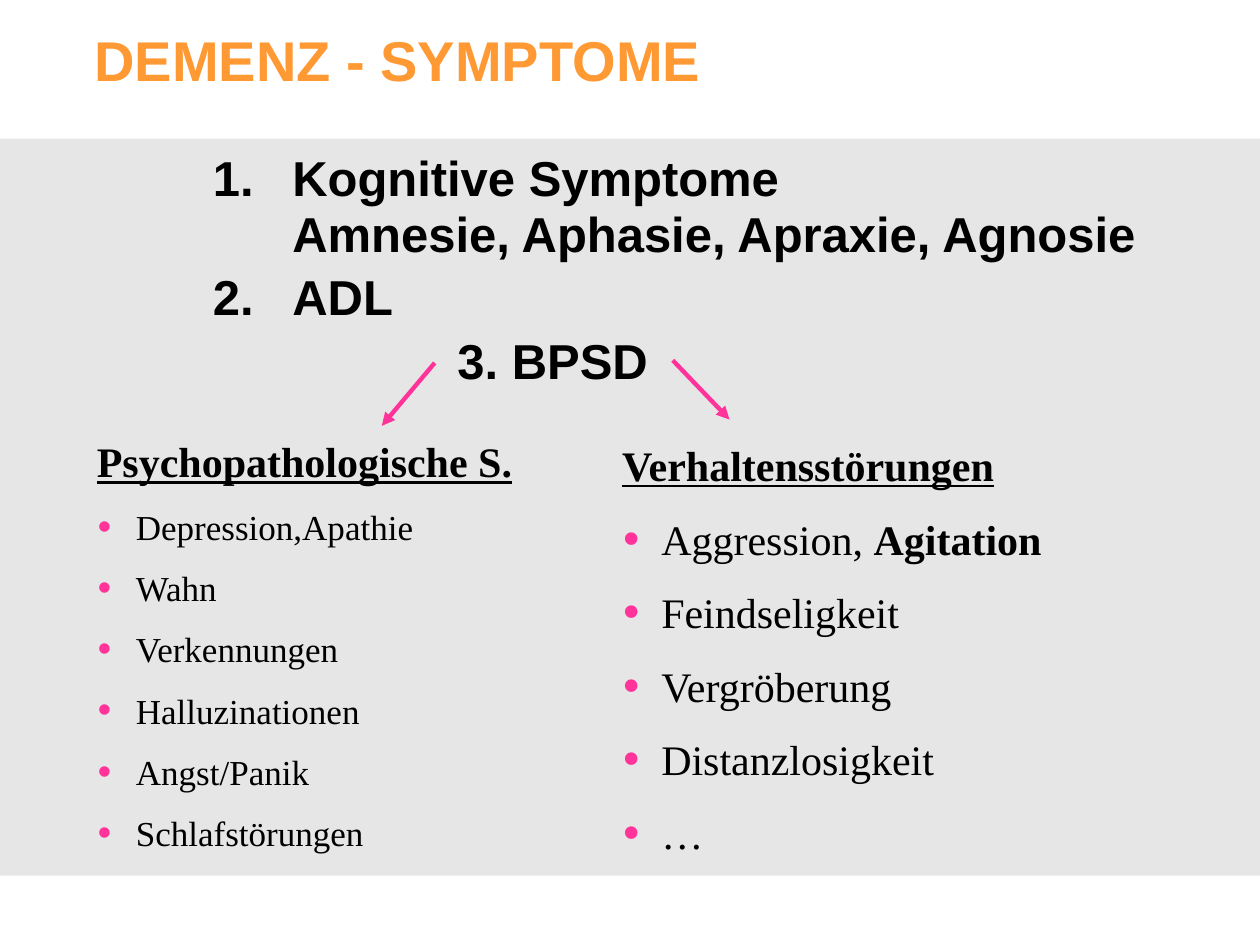
from dataclasses import dataclass

from lxml import etree
from pptx import Presentation
from pptx.dml.color import RGBColor
from pptx.enum import shapes, text
from pptx.oxml import ns
from pptx.util import Inches, Pt


@dataclass(frozen=True)
class Theme:
    orange = RGBColor(0xFF, 0x99, 0x33)
    pink = RGBColor(0xFF, 0x33, 0x99)
    gray = RGBColor(0xE6, 0xE6, 0xE6)
    black = RGBColor(0, 0, 0)
    sans = "Arial"
    serif = "Times New Roman"
    title_size = Pt(32)
    main_size = Pt(28)
    heading_size = Pt(24)
    arrow_width = Pt(2.5)


THEME = Theme()

# text, left margin, first-line indent, line spacing
MAIN_SYMPTOMS = [
    ("1.\tKognitive Symptome", 0.63, -0.63, 0.75),
    ("Amnesie, Aphasie, Apraxie, Agnosie", 0.63, 0, 0.75),
    ("2.\tADL", 0.63, -0.63, 0.9),
    ("3. BPSD", 1.94, 0, 0.9),
]
# each item is a list of (text, bold) runs
PSYCHOPATHOLOGICAL = [
    [(item, False)]
    for item in ("Depression,Apathie", "Wahn", "Verkennungen",
                 "Halluzinationen", "Angst/Panik", "Schlafstörungen")
]
BEHAVIOURAL = [[("Aggression, ", False), ("Agitation", True)]] + [
    [(item, False)]
    for item in ("Feindseligkeit", "Vergröberung", "Distanzlosigkeit", "…")
]


def set_attributes(target, values):
    for name, value in values.items():
        setattr(target, name, value)


def add_run(paragraph, wording, color=THEME.black, **font_values):
    run = paragraph.add_run()
    run.text = wording
    set_attributes(run.font, font_values)
    run.font.color.rgb = color


def set_indent(paragraph, margin, first_line):
    properties = paragraph._p.get_or_add_pPr()
    properties.set("marL", str(Inches(margin)))
    properties.set("indent", str(Inches(first_line)))
    return properties


def add_bullet(paragraph):
    properties = set_indent(paragraph, 0.31, -0.31)
    color = etree.SubElement(properties, ns.qn("a:buClr"))
    etree.SubElement(color, ns.qn("a:srgbClr"), val=str(THEME.pink))
    etree.SubElement(properties, ns.qn("a:buSzPct"), val="125000")
    etree.SubElement(properties, ns.qn("a:buFont"), typeface=THEME.serif)
    etree.SubElement(properties, ns.qn("a:buChar"), char="•")


def next_paragraph(frame, index):
    return frame.add_paragraph() if index else frame.paragraphs[0]


def add_text_frame(slide, box, **frame_values):
    frame = slide.shapes.add_textbox(*map(Inches, box)).text_frame
    set_attributes(frame, {"word_wrap": True, **frame_values})
    return frame


def add_background_band(slide):
    band = slide.shapes.add_shape(
        shapes.MSO_SHAPE.RECTANGLE, 0, Inches(1.1), Inches(10), Inches(5.85))
    band.shadow.inherit = False
    band.fill.solid()
    band.fill.fore_color.rgb = THEME.gray
    band.line.fill.background()
    # Behind the title placeholder
    slide.shapes._spTree.insert(2, band._element)


def format_title(slide, wording):
    title = slide.shapes.title
    set_attributes(title, {
        "left": Inches(0.75), "top": Inches(0.17),
        "width": Inches(8.5), "height": Inches(0.6)})
    set_attributes(title.text_frame, {
        "margin_left": 0, "margin_right": 0, "word_wrap": True,
        "auto_size": text.MSO_AUTO_SIZE.NONE,
        "vertical_anchor": text.MSO_ANCHOR.MIDDLE})
    paragraph = title.text_frame.paragraphs[0]
    paragraph.alignment = text.PP_ALIGN.LEFT
    add_run(paragraph, wording, THEME.orange,
            name=THEME.sans, size=THEME.title_size, bold=True)


def add_main_symptoms(slide):
    frame = add_text_frame(slide, (1.69, 1.23, 8.31, 2),
                           margin_left=0, margin_right=0)
    for index, (wording, margin, first_line, spacing) in enumerate(MAIN_SYMPTOMS):
        paragraph = next_paragraph(frame, index)
        set_indent(paragraph, margin, first_line)
        paragraph.line_spacing = spacing
        if index:
            paragraph.space_before = Pt(6.7)
        add_run(paragraph, wording,
                name=THEME.sans, size=THEME.main_size, bold=True)


def add_symptom_list(slide, box, heading, items, size, gap):
    frame = add_text_frame(slide, box,
                           auto_size=text.MSO_AUTO_SIZE.SHAPE_TO_FIT_TEXT)
    add_run(frame.paragraphs[0], heading, name=THEME.serif,
            size=THEME.heading_size, bold=True, underline=True)
    for item in items:
        paragraph = frame.add_paragraph()
        add_bullet(paragraph)
        paragraph.space_before = Pt(gap)
        for wording, bold in item:
            add_run(paragraph, wording, name=THEME.serif, size=Pt(size), bold=bold)


def add_arrow(slide, start, end):
    arrow = slide.shapes.add_connector(
        shapes.MSO_CONNECTOR.STRAIGHT, *map(Inches, start + end))
    arrow.line.color.rgb = THEME.pink
    arrow.line.width = THEME.arrow_width
    etree.SubElement(arrow.line._get_or_add_ln(), ns.qn("a:tailEnd"), type="triangle")
    etree.SubElement(arrow._element.spPr, ns.qn("a:effectLst"))


def main():
    deck = Presentation()
    deck.slide_width, deck.slide_height = Inches(10), Inches(7.5)
    slide = deck.slides.add_slide(deck.slide_layouts[5])
    add_background_band(slide)
    format_title(slide, "DEMENZ - SYMPTOME")
    add_main_symptoms(slide)
    add_symptom_list(slide, (0.67, 3.41, 4.25, 3.5), "Psychopathologische S.",
                     PSYCHOPATHOLOGICAL, size=20, gap=11)
    add_symptom_list(slide, (4.84, 3.44, 4.33, 4.06), "Verhaltensstörungen",
                     BEHAVIOURAL, size=24, gap=13.2)
    add_arrow(slide, (3.45, 2.88), (3.03, 3.38))
    add_arrow(slide, (5.34, 2.86), (5.79, 3.33))
    deck.save("out.pptx")


if __name__ == "__main__":
    main()
